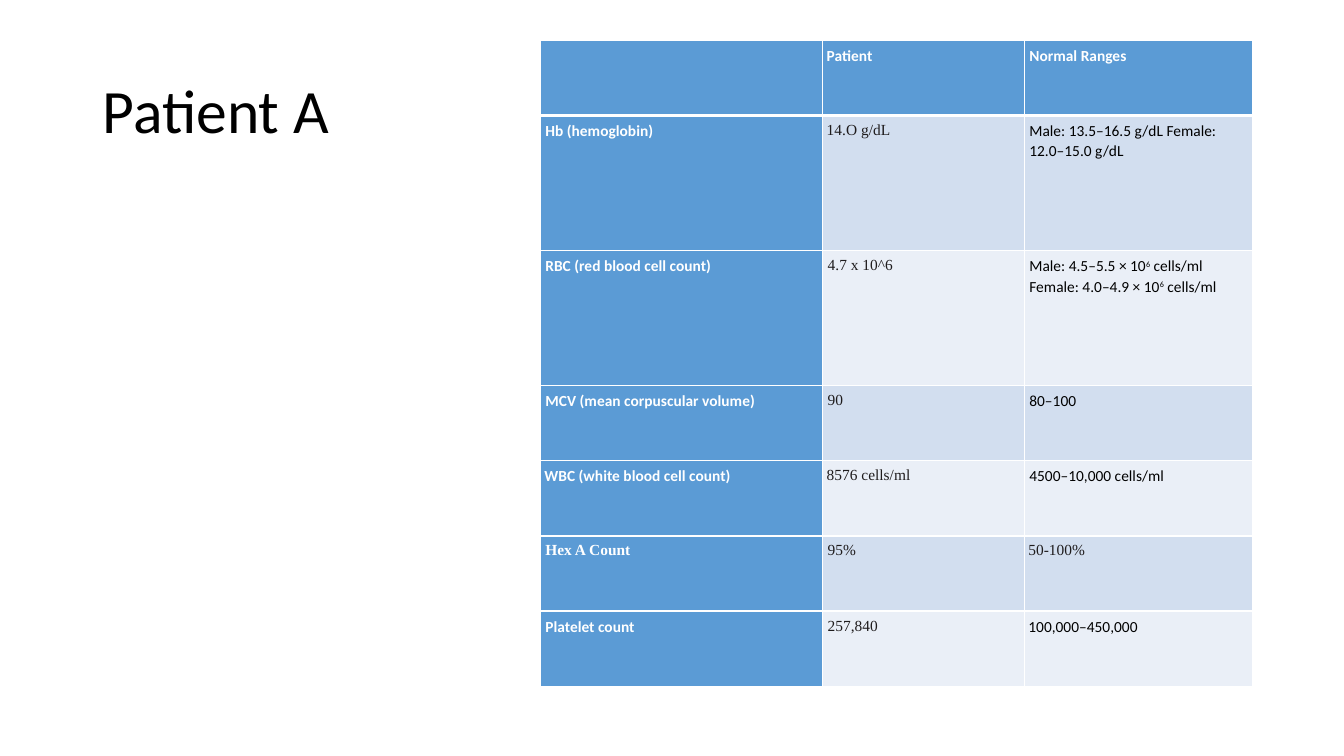
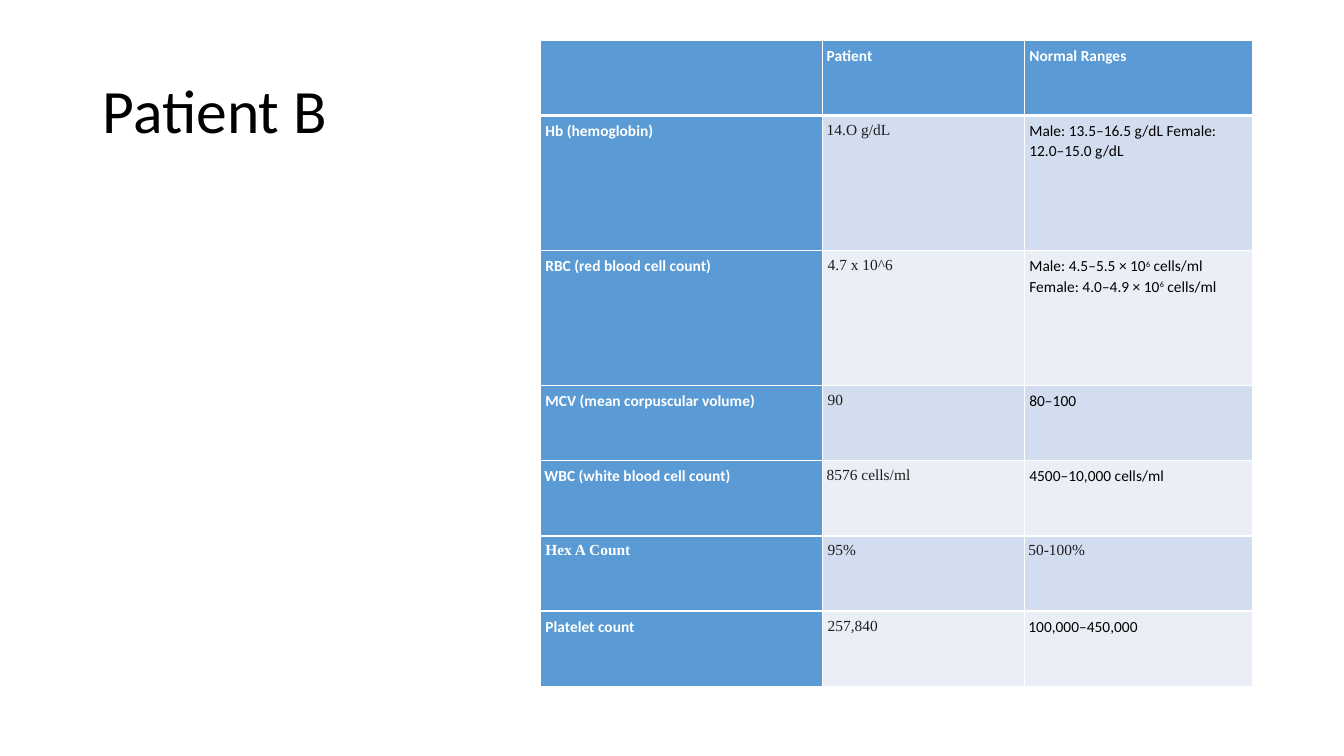
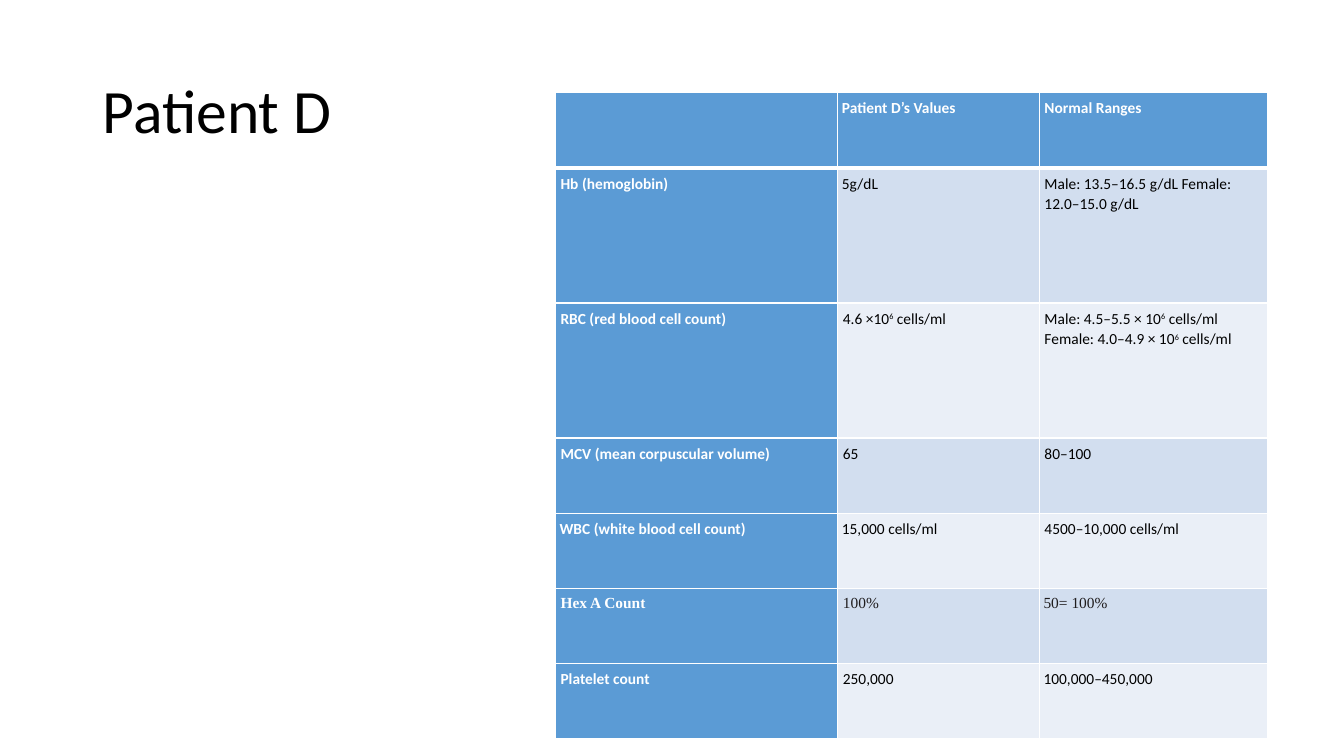
from pptx import Presentation
from pptx.dml.color import RGBColor
from pptx.enum.text import MSO_ANCHOR
from pptx.oxml import parse_xml
from pptx.oxml.ns import nsdecls
from pptx.util import Inches, Pt

BLUE = RGBColor(0x5B, 0x9B, 0xD5)
BAND = RGBColor(0xD2, 0xDE, 0xEF)
PALE = RGBColor(0xEA, 0xEF, 0xF7)
WHITE = RGBColor(0xFF, 0xFF, 0xFF)
BLACK = RGBColor(0x00, 0x00, 0x00)
INK = RGBColor(0x1F, 0x1C, 0x1D)
SANS, SERIF = "Calibri", "Times New Roman"

TESTS = ["Hb (hemoglobin)", "RBC (red blood cell count)", "MCV (mean corpuscular volume)",
         "WBC (white blood cell count)", "Hex A Count", "Platelet count"]
RANGES = ["Male: 13.5–16.5 g/dL Female: 12.0–15.0 g/dL",
          "Male: 4.5–5.5 × 10|6| cells/ml Female: 4.0–4.9 × 10|6| cells/ml",
          "80–100", "4500–10,000 cells/ml", "50-100%", "100,000–450,000"]
HEX_ROW = 5
FLUSH = {(0, 1), (1, 1), (4, 0), (4, 1), (5, 2), (6, 2)}

NORMAL = ["14.O g/dL", "4.7 x 10^6", "90", "8576 cells/ml", "95%", "257,840"]
ANEMIC = ["5g/dL", "4.6 ×10|6| cells/ml", "65", "15,000 cells/ml", "100%", "250,000"]
PATIENTS = [
    ("Patient A", 3.15, (5.36, 0.4), "Patient", NORMAL, SERIF, "50-100%"),
    ("Patient B", 3.15, (5.36, 0.4), "Patient", NORMAL, SERIF, "50-100%"),
    ("Patient D", 3.31, (5.51, 0.92), "Patient D’s Values", ANEMIC, SANS, "50= 100%"),
]

COLS = [2.8, 2, 2.26]
HEIGHT, TALL = 6.41, 1.34
SHORT = (HEIGHT - 2 * TALL) / 5
ROWS = [SHORT, TALL, TALL] + [SHORT] * 4
MARGINS = {"margin_left": Inches(0.04), "margin_top": Inches(0.05),
           "margin_right": Inches(0.08), "margin_bottom": 0}


def add_run(p, text, color, **fmt):
    r = p.add_run()
    r.text = text
    for name, value in fmt.items():
        setattr(r.font, name, value)
    r.font.color.rgb = color
    return r


def add_borders(cell, row):
    widths = {"L": 1, "R": 1, "T": 3 if row == 1 else 1, "B": 3 if row == 0 else 1}
    tcPr = cell._tc.get_or_add_tcPr()
    for i, (side, width) in enumerate(widths.items()):
        tcPr.insert(i, parse_xml(
            f'<a:ln{side} {nsdecls("a")} w="{Pt(width)}"><a:solidFill>'
            f'<a:srgbClr val="{WHITE}"/></a:solidFill></a:ln{side}>'))


prs = Presentation()
prs.slide_width, prs.slide_height = Inches(13.33), Inches(7.5)

for title, width, (left, top), heading, values, value_font, hex_range in PATIENTS:
    s = prs.slides.add_slide(prs.slide_layouts[6])

    tf = s.shapes.add_textbox(Inches(0.92), Inches(0.4), Inches(width), Inches(1.45)).text_frame
    tf.word_wrap = True
    tf.vertical_anchor = MSO_ANCHOR.MIDDLE
    p = tf.paragraphs[0]
    p.line_spacing = 0.9
    add_run(p, title, BLACK, size=Pt(44), name=SANS)

    table = s.shapes.add_table(len(ROWS), len(COLS), Inches(left), Inches(top),
                               Inches(sum(COLS)), Inches(HEIGHT)).table
    for column, size in zip(table.columns, COLS):
        column.width = Inches(size)
    for line, size in zip(table.rows, ROWS):
        line.height = Inches(size)

    ranges = [hex_range if text == "50-100%" else text for text in RANGES]
    grid = [("", heading, "Normal Ranges"), *zip(TESTS, values, ranges)]
    for row, texts in enumerate(grid):
        for col, text in enumerate(texts):
            cell = table.cell(row, col)
            header = row == 0 or col == 0
            cell.fill.solid()
            cell.fill.fore_color.rgb = BLUE if header else BAND if row % 2 else PALE
            add_borders(cell, row)
            if not text:
                continue
            for name, value in MARGINS.items():
                setattr(cell, name, value)
            font = SERIF if row == HEX_ROW else value_font if col == 1 and row else SANS
            color = WHITE if header else INK if font == SERIF else BLACK
            p = cell.text_frame.paragraphs[0]
            p.line_spacing = 1.07
            if (row, col) not in FLUSH:
                p._p.get_or_add_pPr().set("marL", str(Inches(0.01)))
            for i, part in enumerate(text.split("|")):
                raised = i % 2
                r = add_run(p, part, color, size=Pt(10 if raised else 11), name=font, bold=header)
                if raised:
                    r._r.get_or_add_rPr().set("baseline", "30000")

prs.save("out.pptx")
